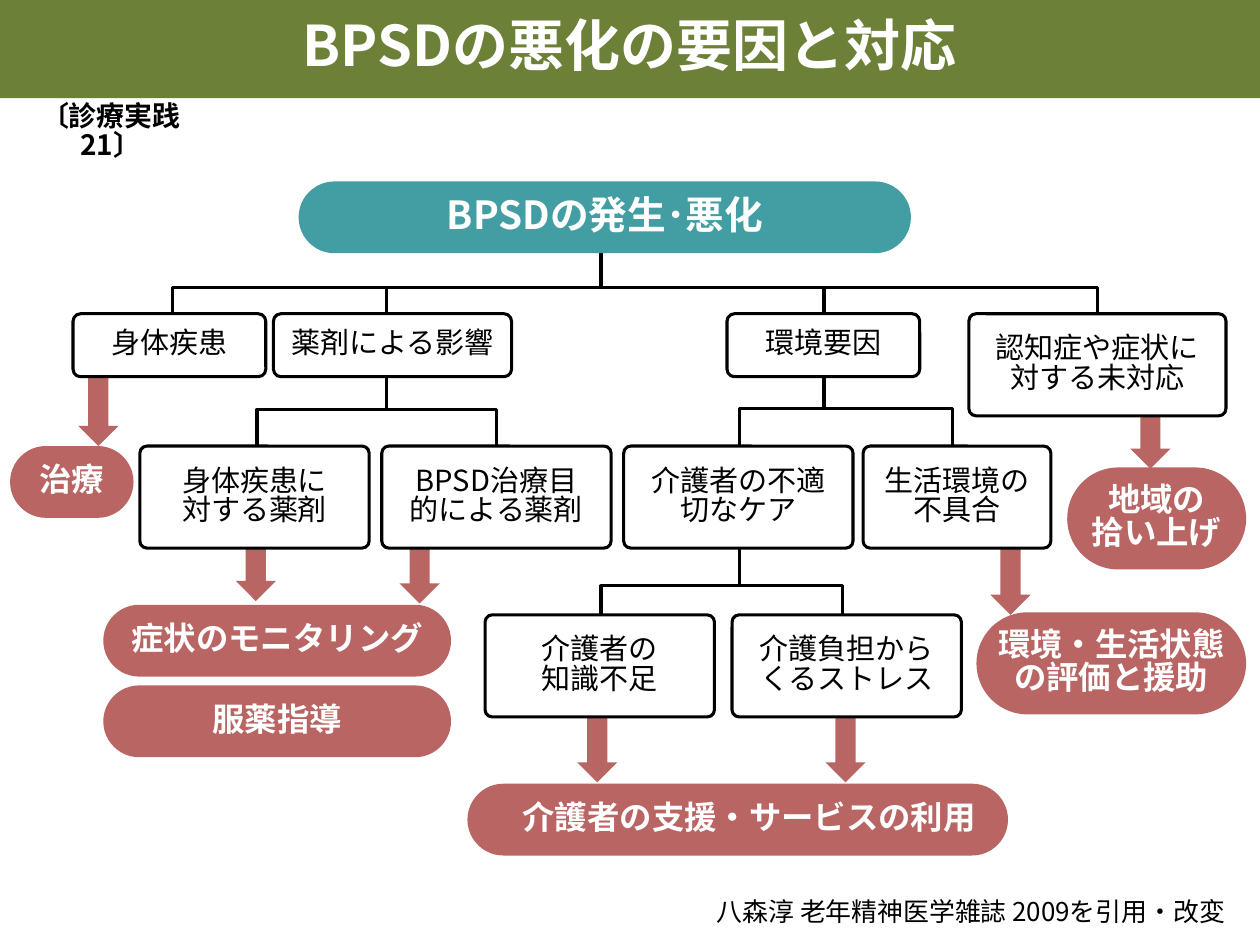
from pptx import Presentation
from pptx.dml.color import RGBColor
from pptx.enum.shapes import MSO_CONNECTOR, MSO_SHAPE
from pptx.enum.text import MSO_ANCHOR, PP_ALIGN
from pptx.oxml.ns import qn
from pptx.util import Inches, Pt
from lxml.etree import SubElement

FONT = "Noto Sans CJK JP"
COLORS = {"band": "6D8038", "root": "439EA3", "care": "B96563",
          "white": "FFFFFF", "ink": "000000"}


def color(name):
    return RGBColor.from_string(COLORS[name])


def write(shape, text, size, ink="ink", bold=False, wrap=True,
          align=PP_ALIGN.CENTER, anchor=MSO_ANCHOR.MIDDLE, side=0.1):
    frame = shape.text_frame
    frame.text = text
    frame.word_wrap = wrap
    frame.vertical_anchor = anchor
    frame.margin_left = frame.margin_right = Inches(side)
    frame.margin_top = frame.margin_bottom = Inches(0.05)
    for para in frame.paragraphs:
        para.alignment = align
        para.line_spacing = 0.84
        for run in para.runs:
            font = run.font
            font.size, font.bold = Pt(size), bold
            font.color.rgb = color(ink)
            font.name = FONT
            SubElement(run._r.get_or_add_rPr(), qn("a:ea")).set("typeface", FONT)


def block(slide, kind, box, fill):
    shape = slide.shapes.add_shape(kind, *map(Inches, box))
    shape.shadow.inherit = False
    shape.fill.solid()
    shape.fill.fore_color.rgb = color(fill)
    shape.line.fill.background()
    return shape


def pill(slide, box, text, fill="care", size=18.5):
    shape = block(slide, MSO_SHAPE.ROUNDED_RECTANGLE, box, fill)
    shape.adjustments[0] = 0.5
    write(shape, text, size, "white", True, wrap=box[3] > 0.6, side=0.02)
    return shape


def stroke(shape):
    shape.line.color.rgb = color("ink")
    shape.line.width = Pt(1.75)


def node(slide, box, text):
    shape = block(slide, MSO_SHAPE.ROUNDED_RECTANGLE, box, "white")
    shape.adjustments[0] = round(0.06 / box[3], 2)
    stroke(shape)
    write(shape, text, 16.6, wrap=box[3] > 0.6, side=0.14)


def stem(slide, x, top, end):
    line = slide.shapes.add_connector(
        MSO_CONNECTOR.STRAIGHT, *map(Inches, (x, top, x, end)))
    stroke(line)
    SubElement(line._element.spPr, qn("a:effectLst"))


def fork(slide, x, top, bar, end, kids):
    """Stem from a parent, a bracket to its outer kids, stems to the rest."""
    first, *inner, last = kids
    stem(slide, x, top, bar)
    path = slide.shapes.build_freeform(Inches(first), Inches(end))
    path.add_line_segments(
        [(Inches(a), Inches(b)) for a, b in
         ((first, bar), (last, bar), (last, end))], close=False)
    shape = path.convert_to_shape()
    shape.shadow.inherit = False
    shape.fill.background()
    stroke(shape)
    for kid in inner:
        stem(slide, kid, bar, end)


def header(slide, box):
    left, top, width, height = box
    title = slide.shapes.title
    title.left, title.top, title.width, title.height = map(Inches, box)
    title.fill.solid()
    title.fill.fore_color.rgb = color("band")
    write(title, "BPSDの悪化の要因と対応", 32, "white", True)
    note = slide.shapes.add_textbox(
        *map(Inches, (left, top + height, 1.76, 0.37)))
    write(note, "〔診療実践 21〕", 16, bold=True, anchor=MSO_ANCHOR.TOP)


def care(slide, left, top):
    # Arrows from causes to responses
    for x, y in ((0.54, 0), (1.79, 1.23), (3.09, 1.25), (4.5, 2.67),
                 (6.47, 2.67), (7.78, 1.34), (8.89, 0.18)):
        block(slide, MSO_SHAPE.DOWN_ARROW,
              (left + x, top + y, 0.32, 0.58), "care")
    # Responses
    for x, y, width, height, text in (
            (0, 0.58, 0.98, 0.57, "治療"),
            (0.74, 1.84, 2.76, 0.57, "症状のモニタリング"),
            (0.74, 2.48, 2.76, 0.57, "服薬指導"),
            (8.39, 0.75, 1.42, 0.81, "地域の\n拾い上げ"),
            (7.67, 1.9, 2.14, 0.81, "環境・生活状態の評価と援助")):
        pill(slide, (left + x, top + y, width, height), text)
    aid = pill(slide, (left + 3.63, top + 3.26, 4.29, 0.57),
               "介護者の支援・サービスの利用")
    aid.text_frame.margin_left = Inches(0.2)


def tree(slide, left, top):
    # Branch lines: parent x, start, bar, end, child x
    for x, start, bar, end, kids in (
            (4.19, 0.57, 0.84, 1.05, (0.79, 2.49, 5.96, 8.13)),
            (2.49, 1.55, 1.81, 2.1, (1.46, 3.36)),
            (5.96, 1.55, 1.8, 2.1, (5.29, 6.98)),
            (5.29, 2.91, 3.21, 3.44, (4.19, 6.11))):
        fork(slide, left + x, top + start, top + bar, top + end,
             [left + kid for kid in kids])
    pill(slide, (left + 1.79, top, 4.86, 0.57), "BPSDの発生･悪化",
         "root", 22.1)
    # Causes, level by level
    levels = (
        (1.05, ((0, 1.53, 0.5, "身体疾患"),
                (1.59, 1.89, 0.5, "薬剤による影響"),
                (5.19, 1.53, 0.5, "環境要因"),
                (7.11, 2.04, 0.81, "認知症や症状に対する未対応"))),
        (2.1, ((0.53, 1.82, 0.81, "身体疾患に\n対する薬剤"),
               (2.45, 1.82, 0.81, "BPSD治療目的による薬剤"),
               (4.37, 1.82, 0.81, "介護者の不適切なケア"),
               (6.27, 1.49, 0.81, "生活環境の不具合"))),
        (3.44, ((3.27, 1.82, 0.81, "介護者の\n知識不足"),
                (5.23, 1.82, 0.81, "介護負担からくるストレス"))))
    for y, row in levels:
        for x, width, height, text in row:
            node(slide, (left + x, top + y, width, height), text)


def credit(slide, box):
    shape = slide.shapes.add_textbox(*map(Inches, box))
    write(shape, "八森淳 老年精神医学雑誌 2009を引用・改変", 14.8,
          wrap=False, align=PP_ALIGN.RIGHT)


def main():
    deck = Presentation()
    deck.slide_width, deck.slide_height = Inches(10), Inches(7.5)
    slide = deck.slides.add_slide(deck.slide_layouts[5])
    header(slide, (0, 0, 10, 0.78))
    care(slide, 0.08, 2.96)
    tree(slide, 0.58, 1.44)
    credit(slide, (5.44, 7.1, 4.38, 0.3))
    deck.save("out.pptx")


if __name__ == "__main__":
    main()
